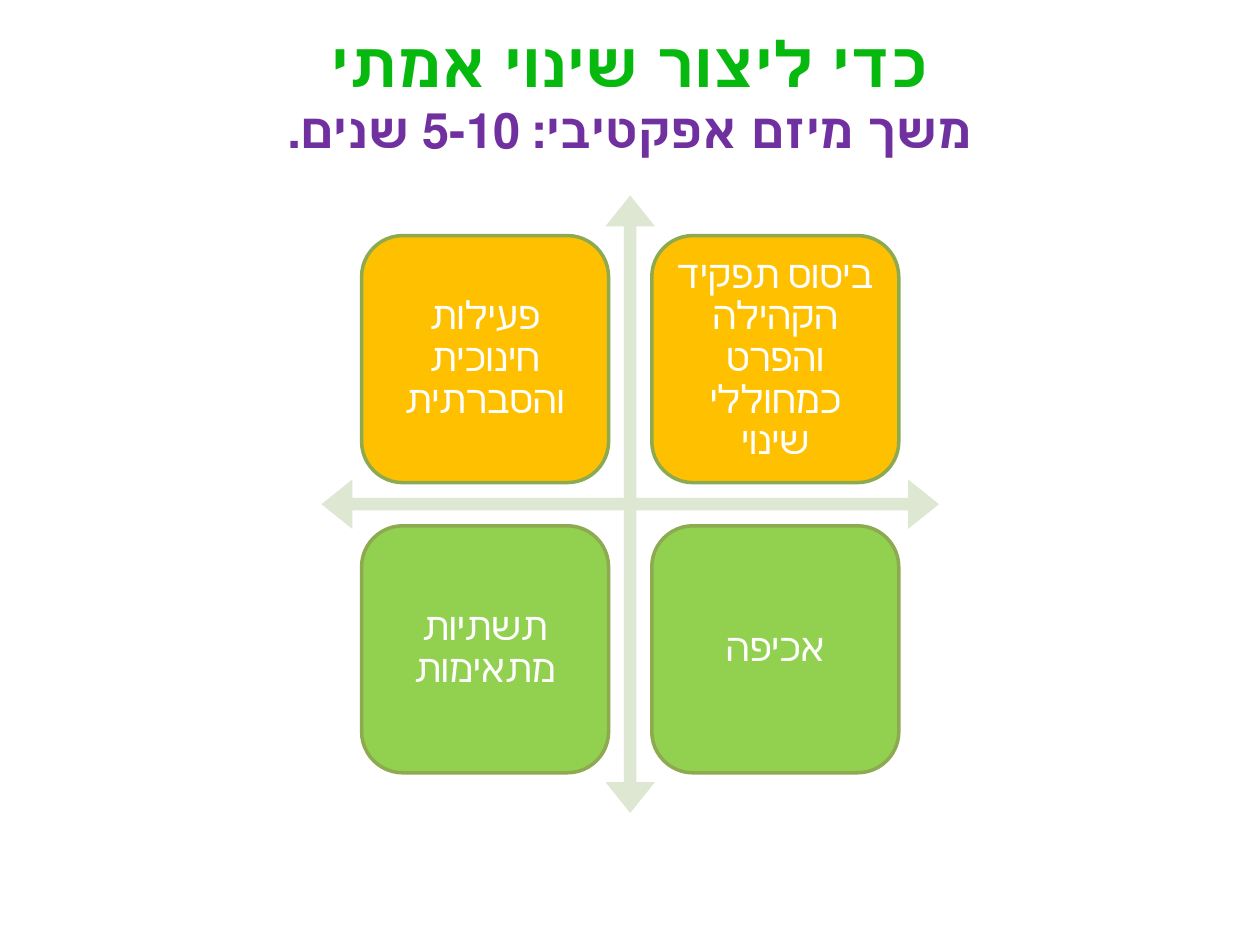
import pptx
import pptx.dml.color
import pptx.enum.shapes
import pptx.enum.text
import pptx.oxml.ns
import pptx.util
from lxml import etree

Cm = pptx.util.Cm
Pt = pptx.util.Pt
CENTER = pptx.enum.text.PP_ALIGN.CENTER
SHAPES = pptx.enum.shapes.MSO_SHAPE


def color(value):
    return pptx.dml.color.RGBColor.from_string(value)


def assign(target, values):
    for key, value in values.items():
        setattr(target, key, value)


class SlideBuilder:
    font_name = "Calibri"
    arrow_fill = "DEE7D1"
    border = "8DAA51"
    frame_format = {
        "word_wrap": True,
        "auto_size": pptx.enum.text.MSO_AUTO_SIZE.NONE,
        "vertical_anchor": pptx.enum.text.MSO_ANCHOR.MIDDLE,
    }

    def __init__(self, slide):
        self.slide = slide

    def start_paragraph(self, frame):
        paragraph = frame.paragraphs[0]
        paragraph.alignment = CENTER
        paragraph._p.get_or_add_pPr().set("rtl", "1")
        return paragraph

    def run(self, paragraph, text, size, fill, bold=False, font_name=None):
        run = paragraph.add_run()
        run.text = text
        assign(run.font, {"name": font_name or self.font_name,
                          "size": Pt(size), "bold": bold})
        run.font.color.rgb = color(fill)
        return run

    def title(self, lines, left, top, width, height, bottom_inset):
        heading = self.slide.shapes.title
        assign(heading, {"left": Cm(left), "top": Cm(top),
                         "width": Cm(width), "height": Cm(height)})
        frame = heading.text_frame
        assign(frame, {**self.frame_format, "margin_bottom": Cm(bottom_inset)})
        paragraph = self.start_paragraph(frame)
        for index, (size, fill, pieces) in enumerate(lines):
            if index:
                paragraph.add_line_break()
            for text, font_name in pieces:
                self.run(paragraph, text, size, fill, True, font_name)

    def shape(self, kind, left, top, size, fill):
        shape = self.slide.shapes.add_shape(
            kind, Cm(left), Cm(top), Cm(size), Cm(size))
        shape.shadow.inherit = False
        shape.fill.solid()
        shape.fill.fore_color.rgb = color(fill)
        return shape

    def axes(self, left, top, size):
        arrows = self.shape(SHAPES.QUAD_ARROW, left, top, size, self.arrow_fill)
        arrows.line.fill.background()
        for index, value in enumerate((0.02, 0.04, 0.05)):
            arrows.adjustments[index] = value

    def quadrant(self, text, left, top, size, fill):
        card = self.shape(SHAPES.ROUNDED_RECTANGLE, left, top, size, fill)
        card.line.color.rgb = color(self.border)
        card.line.width = Pt(2)
        frame = card.text_frame
        margins = ("margin_left", "margin_top", "margin_right", "margin_bottom")
        assign(frame, {**self.frame_format, **dict.fromkeys(margins, Cm(0.23))})
        paragraph = self.start_paragraph(frame)
        paragraph.line_spacing = 0.9
        run = self.run(paragraph, text, 22, "FFFFFF")
        script_font = etree.SubElement(run.font._element, pptx.oxml.ns.qn("a:cs"))
        script_font.set("typeface", self.font_name)


def main():
    presentation = pptx.Presentation()
    presentation.slide_width = Cm(25.4)
    presentation.slide_height = Cm(19.05)
    builder = SlideBuilder(
        presentation.slides.add_slide(presentation.slide_layouts[5]))

    builder.title([
        (36, "07B90F", [("כדי ", "Calibri"), ("ליצור", "Roboto"),
                        (" שינוי אמתי", "Calibri")]),
        (27.9, "7030A0", [("משך מיזם אפקטיבי: 5-10 שנים.", "Calibri")]),
    ], 1.27, 0.76, 22.86, 3.18, 1.15)

    builder.axes(6.48, 3.94, 12.45)
    quadrants = [
        ("FFC000", ["פעילות חינוכית והסברתית",
                    "ביסוס תפקיד הקהילה והפרט כמחוללי שינוי"]),
        ("92D050", ["תשתיות מתאימות", "אכיפה"]),
    ]
    for row, (fill, labels) in enumerate(quadrants):
        for column, label in enumerate(labels):
            builder.quadrant(label, 7.29 + column * 5.85,
                             4.75 + row * 5.85, 4.98, fill)

    presentation.save("out.pptx")


if __name__ == "__main__":
    main()
